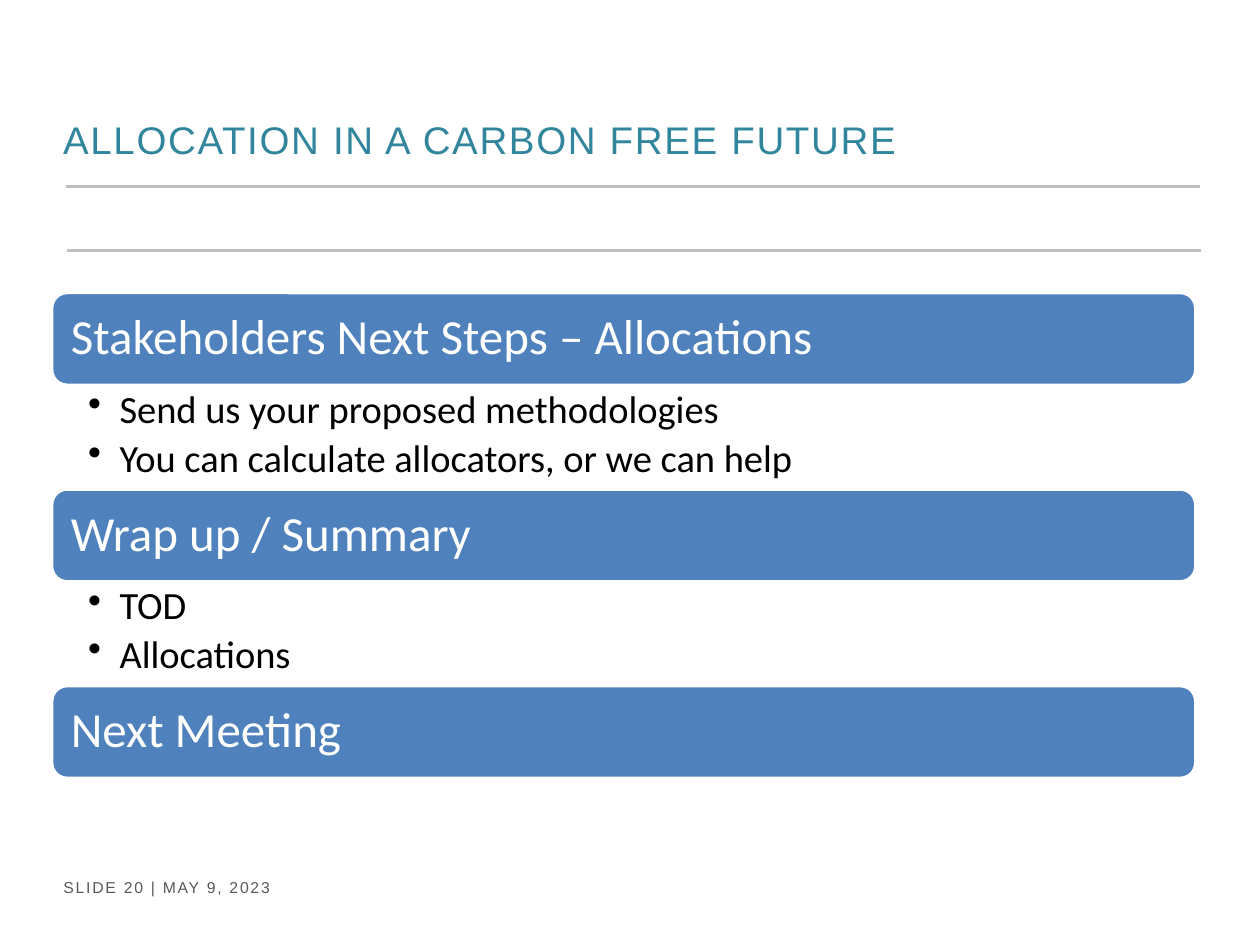
from dataclasses import dataclass

from lxml import etree
from pptx import Presentation
from pptx.dml.color import RGBColor
from pptx.enum.shapes import MSO_CONNECTOR, MSO_SHAPE
from pptx.enum.text import MSO_ANCHOR, PP_ALIGN
from pptx.oxml.ns import qn
from pptx.util import Pt

STRAIGHT = MSO_CONNECTOR.STRAIGHT
ROUNDED = MSO_SHAPE.ROUNDED_RECTANGLE
MIDDLE, TOP = MSO_ANCHOR.MIDDLE, MSO_ANCHOR.TOP
LEFT = PP_ALIGN.LEFT


@dataclass(frozen=True)
class Theme:
    heading_font: str = "Arial"
    body_font: str = "Calibri"
    title: RGBColor = RGBColor(0x31, 0x85, 0x9C)
    footer: RGBColor = RGBColor(0x59, 0x59, 0x59)
    rule: RGBColor = RGBColor(0xBF, 0xBF, 0xBF)
    bar: RGBColor = RGBColor(0x4F, 0x81, 0xBD)
    on_bar: RGBColor = RGBColor(0xFF, 0xFF, 0xFF)
    body: RGBColor = RGBColor(0, 0, 0)
    title_size: int = 22
    footer_size: int = 9
    bar_size: int = 28
    bullet_size: int = 22


THEME = Theme()

AGENDA_LEFT, AGENDA_TOP, AGENDA_WIDTH = 29.5, 167.2, 653.8
BAR_HEIGHT, BULLETS_HEIGHT = 53, 59.3
AGENDA = [
    ("Stakeholders Next Steps – Allocations",
     ["Send us your proposed methodologies",
      "You can calculate allocators, or we can help"]),
    ("Wrap up / Summary", ["TOD", "Allocations"]),
    ("Next Meeting", []),
]


def style(paragraph, font_name, size, color):
    paragraph.alignment = LEFT
    font = paragraph.font
    font.name, font.size = font_name, Pt(size)
    font.color.rgb = color


def set_frame(frame, anchor, left, top, right, bottom):
    frame.word_wrap = True
    frame.vertical_anchor = anchor
    frame.margin_left, frame.margin_top = Pt(left), Pt(top)
    frame.margin_right, frame.margin_bottom = Pt(right), Pt(bottom)


def add_rule(slide, left, top, width):
    rule = slide.shapes.add_connector(
        STRAIGHT, Pt(left), Pt(top), Pt(left + width), Pt(top))
    rule.line.color.rgb = THEME.rule
    rule.line.width = Pt(1.5)
    etree.SubElement(rule._element.spPr, qn("a:effectLst"))


def add_spaced_line(slide, box, text, size, color, anchor):
    """Add one line of heading type, letterspaced by one point."""
    label = slide.shapes.add_textbox(*map(Pt, box))
    set_frame(label.text_frame, anchor, 7.2, 3.6, 7.2, 3.6)
    paragraph = label.text_frame.paragraphs[0]
    run = paragraph.add_run()
    run.text = text
    run._r.get_or_add_rPr().set("spc", "100")
    style(paragraph, THEME.heading_font, size, color)


def add_bar(slide, top, heading):
    bar = slide.shapes.add_shape(
        ROUNDED, Pt(AGENDA_LEFT), Pt(top), Pt(AGENDA_WIDTH), Pt(BAR_HEIGHT))
    bar.shadow.inherit = False
    bar.fill.solid()
    bar.fill.fore_color.rgb = THEME.bar
    bar.line.color.rgb = THEME.on_bar
    bar.line.width = Pt(2)
    set_frame(bar.text_frame, MIDDLE, 8.4, 8.4, 8.4, 8.4)
    paragraph = bar.text_frame.paragraphs[0]
    paragraph.text = heading
    paragraph.line_spacing = 0.9
    style(paragraph, THEME.body_font, THEME.bar_size, THEME.on_bar)


def add_bullets(slide, top, points):
    block = slide.shapes.add_textbox(
        Pt(AGENDA_LEFT), Pt(top), Pt(AGENDA_WIDTH), Pt(BULLETS_HEIGHT))
    frame = block.text_frame
    set_frame(frame, TOP, 20.8, 2.8, 15.6, 2.8)
    for index, point in enumerate(points):
        paragraph = frame.add_paragraph() if index else frame.paragraphs[0]
        paragraph.text = point
        paragraph.level = 1
        paragraph.line_spacing = 0.9
        paragraph.space_after = Pt(4)
        properties = paragraph._p.get_or_add_pPr()
        properties.set("marL", str(Pt(18)))
        properties.set("indent", str(Pt(-18)))
        etree.SubElement(properties, qn("a:buChar")).set("char", "•")
        style(paragraph, THEME.body_font, THEME.bullet_size, THEME.body)


def main():
    deck = Presentation()
    deck.slide_width, deck.slide_height = Pt(720), Pt(540)
    slide = deck.slides.add_slide(deck.slide_layouts[6])

    add_rule(slide, 37.7, 106.6, 648)
    add_rule(slide, 38.3, 143.3, 648)
    add_spaced_line(slide, (29.2, 498, 193, 18), "SLIDE 20 | MAY 9, 2023",
                    THEME.footer_size, THEME.footer, TOP)
    add_spaced_line(slide, (29, 58.5, 656, 42),
                    "ALLOCATION IN A CARBON FREE FUTURE",
                    THEME.title_size, THEME.title, MIDDLE)

    for index, (heading, points) in enumerate(AGENDA):
        top = AGENDA_TOP + index * (BAR_HEIGHT + BULLETS_HEIGHT)
        add_bar(slide, top, heading)
        if points:
            add_bullets(slide, top + BAR_HEIGHT, points)

    deck.save("out.pptx")


if __name__ == "__main__":
    main()
